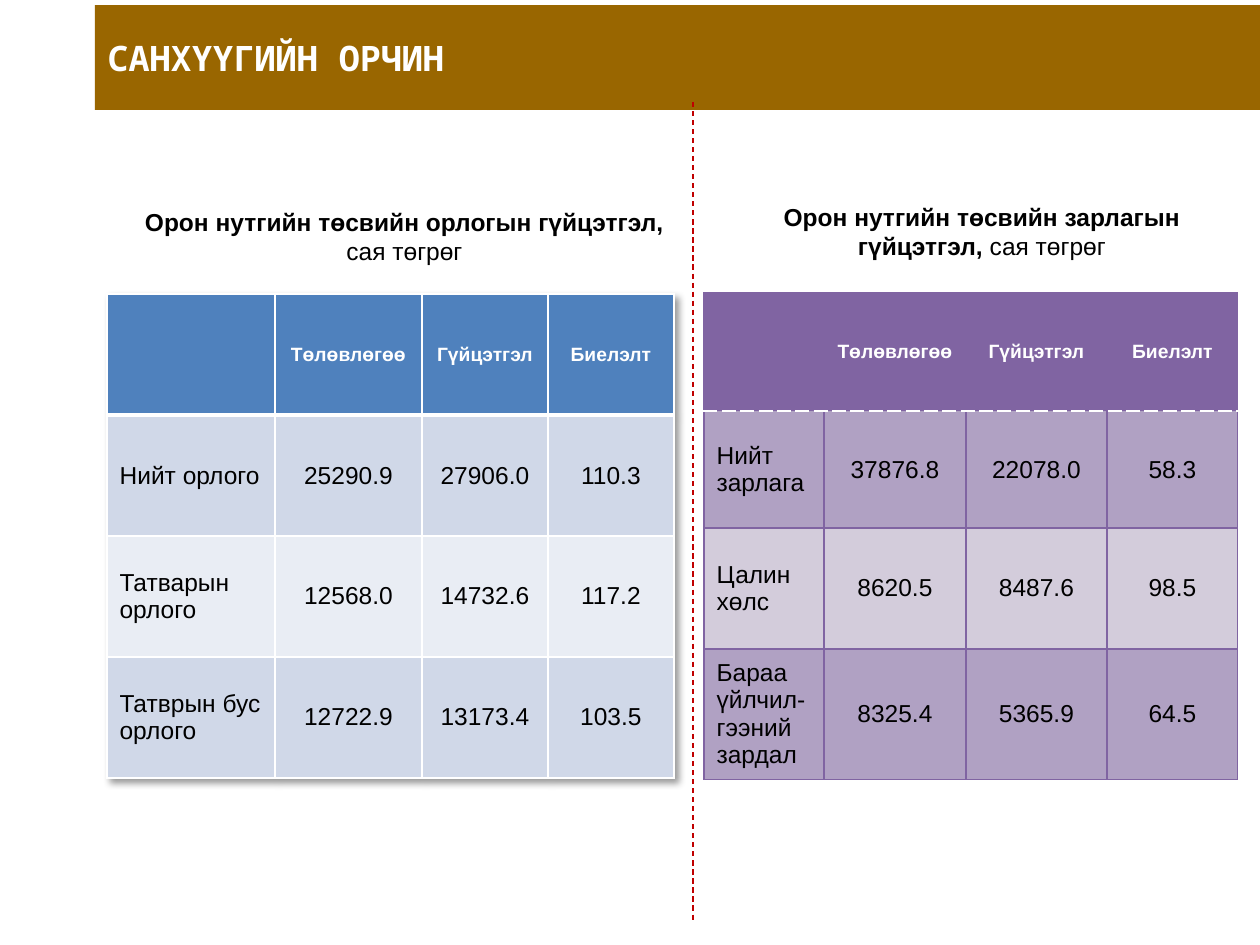
"""Build the local budget slide: income and expenditure tables side by side."""
from dataclasses import dataclass

from lxml import etree
from pptx import Presentation
from pptx import util as u
from pptx.dml.color import RGBColor
from pptx.enum import dml, shapes, text
from pptx.oxml.ns import qn

PX = 914400 / 126
PT = 12700


@dataclass(frozen=True)
class Theme:
    font: str = "Arial"
    title_font: str = "Noto Sans Mono"
    banner: str = "996600"
    divider: str = "C00000"
    light: str = "FFFFFF"
    dark: str = "000000"
    title_size: int = 20
    body_size: int = 14
    head_size: int = 11


THEME = Theme()
TITLE = "САНХҮҮГИЙН ОРЧИН"
HEADS = ["", "Төлөвлөгөө", "Гүйцэтгэл", "Биелэлт"]
UNIT = " сая төгрөг"

PANELS = [
    dict(
        caption="Орон нутгийн төсвийн орлогын гүйцэтгэл,",
        caption_box=(116, 210, 577, 53),
        origin=(107, 294),
        cols=[168, 147, 126, 126],
        rows=[121, 121, 121, 121],
        head="4F81BD",
        bands=["D0D8E8", "E9EDF4"],
        border=("FFFFFF", 1, "solid"),
        rule=("FFFFFF", 3, "solid"),
        shadow=True,
        data=[
            ["Нийт орлого", "25290.9", "27906.0", "110.3"],
            ["Татварын орлого", "12568.0", "14732.6", "117.2"],
            ["Татврын бус орлого", "12722.9", "13173.4", "103.5"],
        ],
    ),
    dict(
        caption="Орон нутгийн төсвийн зарлагын гүйцэтгэл,",
        caption_box=(725, 210, 514, 42),
        origin=(704, 293),
        cols=[120, 142, 141, 131],
        rows=[118, 117, 121, 130],
        head="8064A2",
        bands=["B0A1C3", "D3CCDB"],
        border=("8064A2", 0.75, "solid"),
        rule=("FFFFFF", 0.9, "sysDash"),
        shadow=False,
        data=[
            ["Нийт зарлага", "37876.8", "22078.0", "58.3"],
            ["Цалин хөлс", "8620.5", "8487.6", "98.5"],
            ["Бараа үйлчил-гээний зардал", "8325.4", "5365.9", "64.5"],
        ],
    ),
]


def px(*values):
    return [u.Emu(round(v * PX)) for v in values]


def style(r, size, color, bold=False, font=THEME.font):
    r.font.name, r.font.size, r.font.bold = font, u.Pt(size), bold
    r.font.color.rgb = RGBColor.from_string(color)


def sub(parent, tag, **attrs):
    return etree.SubElement(parent, qn(tag), {k: str(v) for k, v in attrs.items()})


def add_border(cell, side, line):
    color, width, dash = line
    ln = sub(cell._tc.get_or_add_tcPr(), f"a:ln{side}", w=round(width * PT))
    sub(sub(ln, "a:solidFill"), "a:srgbClr", val=color)
    sub(ln, "a:prstDash", val=dash)


def add_title(s):
    title = s.shapes.title
    title.left, title.top, title.width, title.height = px(95, 5, 1165, 105)
    title.fill.solid()
    title.fill.fore_color.rgb = RGBColor.from_string(THEME.banner)
    tf = title.text_frame
    tf.text = TITLE
    tf.auto_size = text.MSO_AUTO_SIZE.NONE
    tf.vertical_anchor = text.MSO_ANCHOR.MIDDLE
    p = tf.paragraphs[0]
    p.alignment = text.PP_ALIGN.LEFT
    style(p.runs[0], THEME.title_size, THEME.light, True, THEME.title_font)


def add_divider(s):
    line = s.shapes.add_connector(shapes.MSO_CONNECTOR.STRAIGHT, *px(693, 102, 693, 921))
    line.line.color.rgb = RGBColor.from_string(THEME.divider)
    line.line.width = u.Pt(0.75)
    line.line.dash_style = dml.MSO_LINE.DASH
    sub(line._element.spPr, "a:effectLst")


def add_caption(s, panel):
    tf = s.shapes.add_textbox(*px(*panel["caption_box"])).text_frame
    tf.word_wrap = True
    tf.vertical_anchor = text.MSO_ANCHOR.MIDDLE
    p = tf.paragraphs[0]
    p.alignment = text.PP_ALIGN.CENTER
    for words, bold in [(panel["caption"], True), (UNIT, False)]:
        r = p.add_run()
        r.text = words
        style(r, THEME.body_size, THEME.dark, bold)


def fill_cell(cell, words, i, j, panel):
    border, rule = panel["border"], panel["rule"]
    sides = dict(L=border, R=border, T=rule if i == 1 else border, B=rule if i == 0 else border)
    for side, line in sides.items():
        add_border(cell, side, line)
    cell.fill.solid()
    fill = panel["bands"][(i - 1) % 2] if i else panel["head"]
    cell.fill.fore_color.rgb = RGBColor.from_string(fill)
    cell.vertical_anchor = text.MSO_ANCHOR.MIDDLE
    cell.text_frame.text = words
    p = cell.text_frame.paragraphs[0]
    p.alignment = text.PP_ALIGN.CENTER if j else text.PP_ALIGN.LEFT
    for r in p.runs:
        if i:
            style(r, THEME.body_size, THEME.dark)
        else:
            style(r, THEME.head_size, THEME.light, True)


def add_budget_table(s, panel):
    cols, rows = panel["cols"], panel["rows"]
    box = px(*panel["origin"], sum(cols), sum(rows))
    table = s.shapes.add_table(len(rows), len(cols), *box).table
    table.horz_banding = False
    for col, width in zip(table.columns, px(*cols)):
        col.width = width
    for row, height in zip(table.rows, px(*rows)):
        row.height = height
    for i, values in enumerate([HEADS] + panel["data"]):
        for j, words in enumerate(values):
            fill_cell(table.cell(i, j), words, i, j, panel)
    if panel["shadow"]:
        effects = etree.Element(qn("a:effectLst"))
        shadow = sub(effects, "a:outerShdw", blurRad=4 * PT, dist=3 * PT, dir=2700000, algn="tl")
        sub(sub(shadow, "a:srgbClr", val=THEME.dark), "a:alpha", val=40000)
        table._tbl.tblPr.insert(0, effects)


def main():
    prs = Presentation()
    prs.slide_width, prs.slide_height = px(1260, 945)
    s = prs.slides.add_slide(prs.slide_layouts[5])
    add_title(s)
    add_divider(s)
    for panel in PANELS:
        add_caption(s, panel)
        add_budget_table(s, panel)
    prs.save("out.pptx")


if __name__ == "__main__":
    main()
